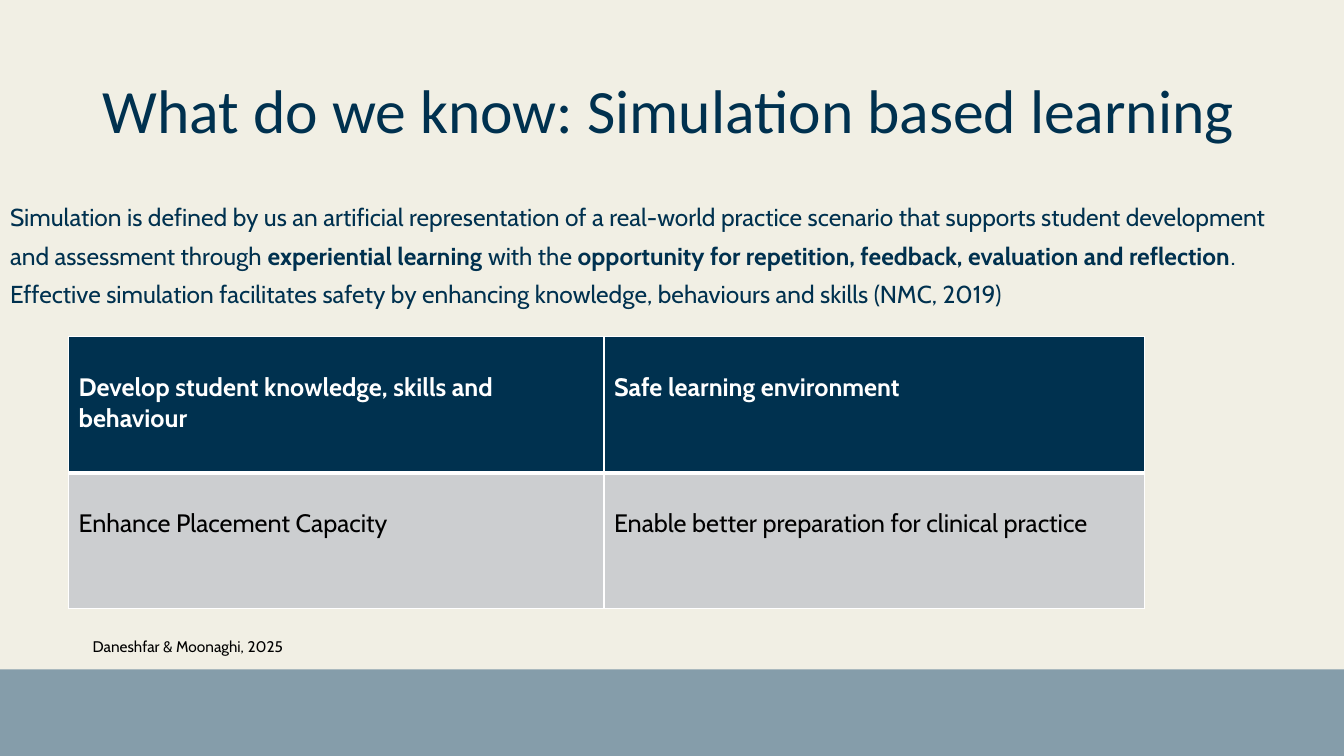
"""Build the slide on simulation based learning."""
from dataclasses import dataclass

from lxml import etree
from pptx import Presentation
from pptx.dml.color import RGBColor as RGB
from pptx.enum.shapes import MSO_SHAPE as SHAPE
from pptx.enum.text import MSO_ANCHOR as ANCHOR, MSO_AUTO_SIZE as FIT, PP_ALIGN as ALIGN
from pptx.oxml.ns import qn
from pptx.util import Inches, Pt


@dataclass(frozen=True)
class Theme:
    paper: str = "F1EFE4"
    navy: str = "00314F"
    band: str = "859DAA"
    grey: str = "CCCED0"
    white: str = "FFFFFF"
    black: str = "000000"
    heading_font: str = "Calibri"
    text_font: str = "Cabin"
    title_size: float = 44
    body_size: float = 17.5
    table_size: float = 18
    citation_size: float = 11


class SlideBuilder:
    def __init__(self, deck, theme):
        self.theme = theme
        self.slide = deck.slides.add_slide(deck.slide_layouts[1])
        self.paint(self.slide.background, theme.paper)

    def paint(self, target, colour):
        target.fill.solid()
        target.fill.fore_color.rgb = RGB.from_string(colour)

    def apply(self, target, values):
        for name, value in values.items():
            setattr(target, name, value)

    def place(self, target, box):
        self.apply(target, dict(zip(("left", "top", "width", "height"), map(Inches, box))))

    def add_runs(self, paragraph, runs, size, colour, font=None):
        for words, bold in runs:
            run = paragraph.add_run()
            run.text = words
            self.apply(run.font, {"name": font or self.theme.text_font,
                                  "size": Pt(size), "bold": bold})
            run.font.color.rgb = RGB.from_string(colour)

    def band(self, box):
        band = self.slide.shapes.add_shape(SHAPE.RECTANGLE, *map(Inches, box))
        band.shadow.inherit = False
        self.paint(band, self.theme.band)
        band.line.fill.background()

    def title(self, words, box):
        title = self.slide.shapes.title
        self.place(title, box)
        self.apply(title.text_frame, {"auto_size": FIT.NONE, "word_wrap": True,
                                      "vertical_anchor": ANCHOR.MIDDLE})
        paragraph = title.text_frame.paragraphs[0]
        self.apply(paragraph, {"alignment": ALIGN.LEFT, "line_spacing": 0.9})
        self.add_runs(paragraph, [(words, False)], self.theme.title_size,
                      self.theme.navy, self.theme.heading_font)

    def body(self, runs, box):
        body = self.slide.placeholders[1]
        self.place(body, box)
        self.apply(body.text_frame, {"auto_size": FIT.NONE, "word_wrap": True,
                                     "vertical_anchor": ANCHOR.TOP})
        paragraph = body.text_frame.paragraphs[0]
        self.apply(paragraph, {"alignment": ALIGN.LEFT, "line_spacing": 1.3,
                               "space_before": Pt(0)})
        properties = paragraph._p.get_or_add_pPr()
        properties.set("marL", "0")
        properties.set("indent", "0")
        etree.SubElement(properties, qn("a:buNone"))
        self.add_runs(paragraph, runs, self.theme.body_size, self.theme.navy)

    def border(self, cell, widths):
        properties = cell._tc.get_or_add_tcPr()
        for side, width in widths.items():
            line = etree.SubElement(properties, qn(f"a:ln{side}"), w=str(Pt(width)))
            fill = etree.SubElement(line, qn("a:solidFill"))
            etree.SubElement(fill, qn("a:srgbClr"), val=self.theme.white)

    def table(self, rows, box, column_widths):
        theme = self.theme
        table = self.slide.shapes.add_table(
            len(rows), len(column_widths), *map(Inches, box)).table
        for column, width in zip(table.columns, column_widths):
            column.width = Inches(width)
        looks = ((theme.navy, theme.white, True, {"T": 1, "B": 3}),
                 (theme.grey, theme.black, False, {"T": 3, "B": 1}))
        for row, entries, look in zip(table.rows, rows, looks):
            fill, colour, bold, edges = look
            for cell, words in zip(row.cells, entries):
                self.border(cell, {"L": 1, "R": 1, **edges})
                self.paint(cell, fill)
                cell.margin_top = Inches(0.35)
                self.add_runs(cell.text_frame.paragraphs[0], [(words, bold)],
                              theme.table_size, colour)

    def citation(self, words, box):
        citation = self.slide.shapes.add_textbox(*map(Inches, box))
        self.apply(citation.text_frame, {"word_wrap": True, "margin_top": Inches(0.14)})
        self.add_runs(citation.text_frame.paragraphs[0], [(words, False)],
                      self.theme.citation_size, self.theme.black)


def main():
    deck = Presentation()
    deck.slide_width, deck.slide_height = Inches(13.33), Inches(7.5)
    builder = SlideBuilder(deck, Theme())
    builder.band((0, 6.64, 13.33, 0.86))
    builder.title("What do we know: Simulation based learning", (0.92, 0.4, 11.5, 1.45))
    definition = [
        ("Simulation is defined by us an artificial representation of a real-world practice "
         "scenario that supports student development and assessment through ", False),
        ("experiential learning", True),
        (" with the ", False),
        ("opportunity for repetition, feedback, evaluation and reflection", True),
        (". Effective simulation facilitates safety by enhancing knowledge, behaviours "
         "and skills (NMC, 2019)", False),
    ]
    builder.body(definition, (0, 1.87, 13.08, 1.72))
    benefits = [
        ("Develop student knowledge, skills and behaviour", "Safe learning environment"),
        ("Enhance Placement Capacity", "Enable better preparation for clinical practice"),
    ]
    builder.table(benefits, (0.68, 3.34, 10.67, 2.7), (5.31, 5.36))
    builder.citation("Daneshfar & Moonaghi, 2025", (0.82, 6.18, 6.67, 0.71))
    deck.save("out.pptx")


if __name__ == "__main__":
    main()
